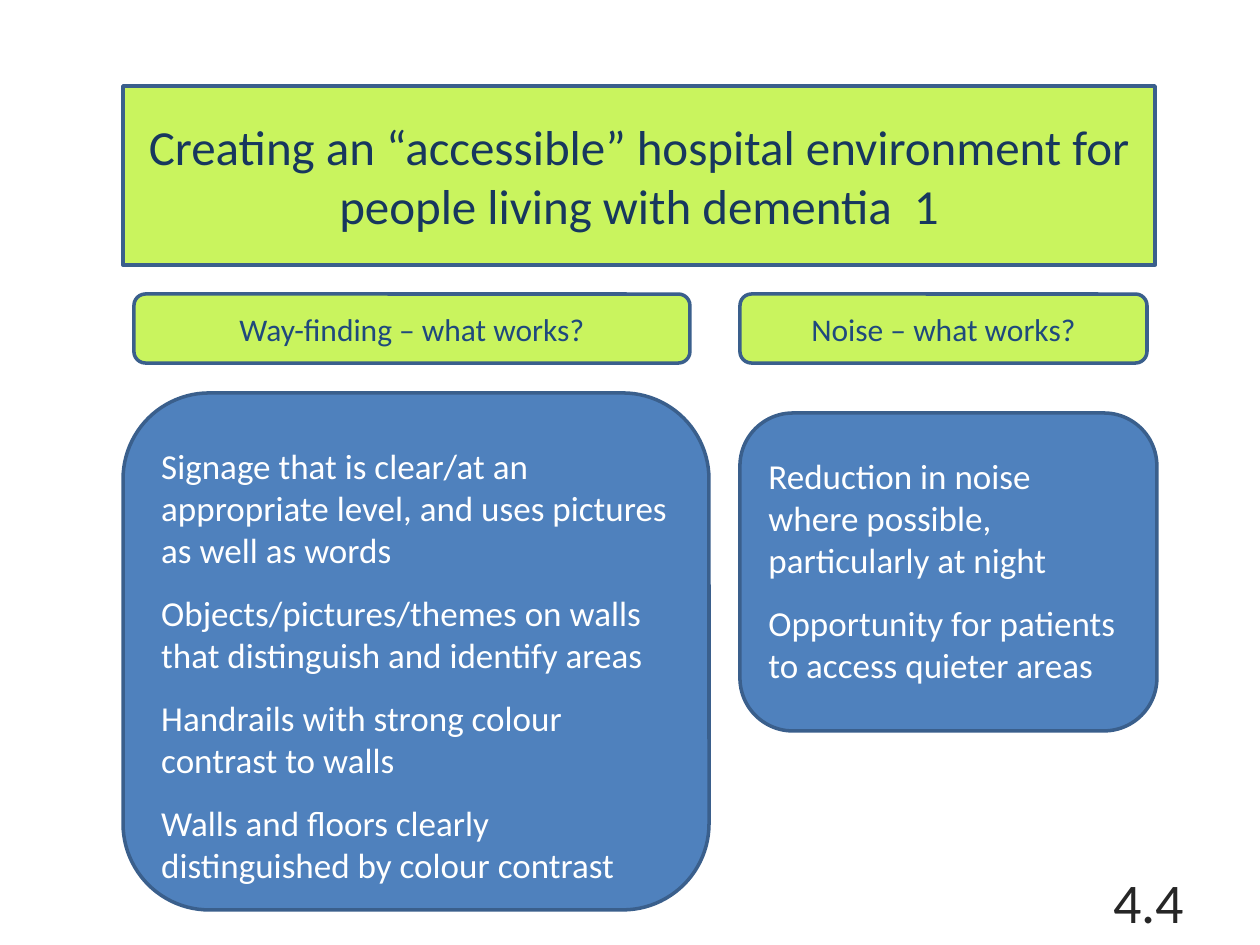
from collections import namedtuple
from dataclasses import dataclass

from lxml import etree
from pptx import Presentation
from pptx.dml.color import RGBColor
from pptx.enum.text import MSO_ANCHOR, MSO_AUTO_SIZE, PP_ALIGN
from pptx.oxml.ns import qn
from pptx.util import Emu, Pt

SCALE = 914400 / 126
COMPARISON_LAYOUT = 4
TOP, MIDDLE = MSO_ANCHOR.TOP, MSO_ANCHOR.MIDDLE
LEFT, CENTER, RIGHT = PP_ALIGN.LEFT, PP_ALIGN.CENTER, PP_ALIGN.RIGHT
NO_AUTOFIT = MSO_AUTO_SIZE.NONE

Box = namedtuple("Box", "left top width height")
Column = namedtuple("Column", "heading heading_box points points_box")


@dataclass(frozen=True)
class Theme:
    font: str = "Calibri"
    lime: str = "C9F45E"
    blue: str = "4F81BD"
    outline: str = "3A5F8C"
    title_text: str = "17375E"
    heading_text: str = "1F497D"
    point_text: str = "FFFFFF"
    number_text: str = "262626"
    title_size: int = 28
    heading_size: int = 18
    point_size: int = 20
    number_size: int = 32
    line_width: int = 2
    point_gap: int = 12


THEME = Theme()
TITLE = "Creating an “accessible” hospital environment for people living with dementia  1"
TITLE_BOX = Box(123, 86, 1032, 179)
NUMBER_BOX = Box(903, 876, 294, 50)
COLUMNS = [
    Column(
        "Way-finding – what works?",
        Box(134, 294, 556, 69),
        [
            "Signage that is clear/at an appropriate level, and uses pictures as well as words",
            "Objects/pictures/themes on walls that distinguish and identify areas",
            "Handrails with strong colour contrast to walls",
            "Walls and floors clearly distinguished by colour contrast",
        ],
        Box(123, 393, 586, 517),
    ),
    Column(
        "Noise – what works?",
        Box(740, 294, 407, 69),
        [
            "Reduction in noise where possible, particularly at night",
            "Opportunity for patients to access quieter areas",
        ],
        Box(740, 413, 417, 318),
    ),
]


def px(length):
    return Emu(round(length * SCALE))


def set_attributes(target, values):
    for name, value in values.items():
        setattr(target, name, value)


def place(shape, box):
    set_attributes(shape, {name: px(value) for name, value in box._asdict().items()})


def make_rounded_panel(shape, box, fill):
    place(shape, box)
    properties = shape._element.spPr
    geometry = etree.SubElement(properties, qn("a:prstGeom"), prst="roundRect")
    etree.SubElement(geometry, qn("a:avLst"))
    shape.fill.solid()
    shape.fill.fore_color.rgb = RGBColor.from_string(fill)
    shape.line.color.rgb = RGBColor.from_string(THEME.outline)
    shape.line.width = Pt(THEME.line_width)


def write_text(shape, lines, size, color, alignment, anchor=MIDDLE, top=6, gap=0):
    frame = shape.text_frame
    set_attributes(frame, {
        "text": "\n".join(lines),
        "word_wrap": True,
        "auto_size": NO_AUTOFIT,
        "vertical_anchor": anchor,
        "margin_left": px(13),
        "margin_right": px(13),
        "margin_top": px(top),
        "margin_bottom": px(6),
    })
    for paragraph in frame.paragraphs:
        set_attributes(paragraph, {
            "alignment": alignment,
            "space_before": Pt(0),
            "space_after": Pt(gap),
        })
        paragraph_properties = paragraph._p.get_or_add_pPr()
        paragraph_properties.set("marL", "0")
        paragraph_properties.set("indent", "0")
        etree.SubElement(paragraph_properties, qn("a:buNone"))
        for run in paragraph.runs:
            set_attributes(run.font, {"name": THEME.font, "size": Pt(size), "bold": False})
            run.font.color.rgb = RGBColor.from_string(color)


def add_title(slide, box):
    shape = slide.shapes.title
    make_rounded_panel(shape, box, THEME.lime)
    write_text(shape, [TITLE], THEME.title_size, THEME.title_text, CENTER)


def add_column(heading, body, column):
    make_rounded_panel(heading, column.heading_box, THEME.lime)
    write_text(heading, [column.heading], THEME.heading_size, THEME.heading_text, CENTER)
    make_rounded_panel(body, column.points_box, THEME.blue)
    write_text(body, column.points, THEME.point_size, THEME.point_text, LEFT,
               anchor=TOP, top=26, gap=THEME.point_gap)


def add_slide_number(slide, box):
    shape = slide.shapes.add_textbox(*map(px, box))
    write_text(shape, ["4.4"], THEME.number_size, THEME.number_text, RIGHT)


def main():
    presentation = Presentation()
    set_attributes(presentation, {"slide_width": px(1260), "slide_height": px(945)})
    slide = presentation.slides.add_slide(presentation.slide_layouts[COMPARISON_LAYOUT])
    add_title(slide, TITLE_BOX)
    for index, column in enumerate(COLUMNS):
        heading = slide.placeholders[2 * index + 1]
        body = slide.placeholders[2 * index + 2]
        add_column(heading, body, column)
    add_slide_number(slide, NUMBER_BOX)
    presentation.save("out.pptx")


if __name__ == "__main__":
    main()
